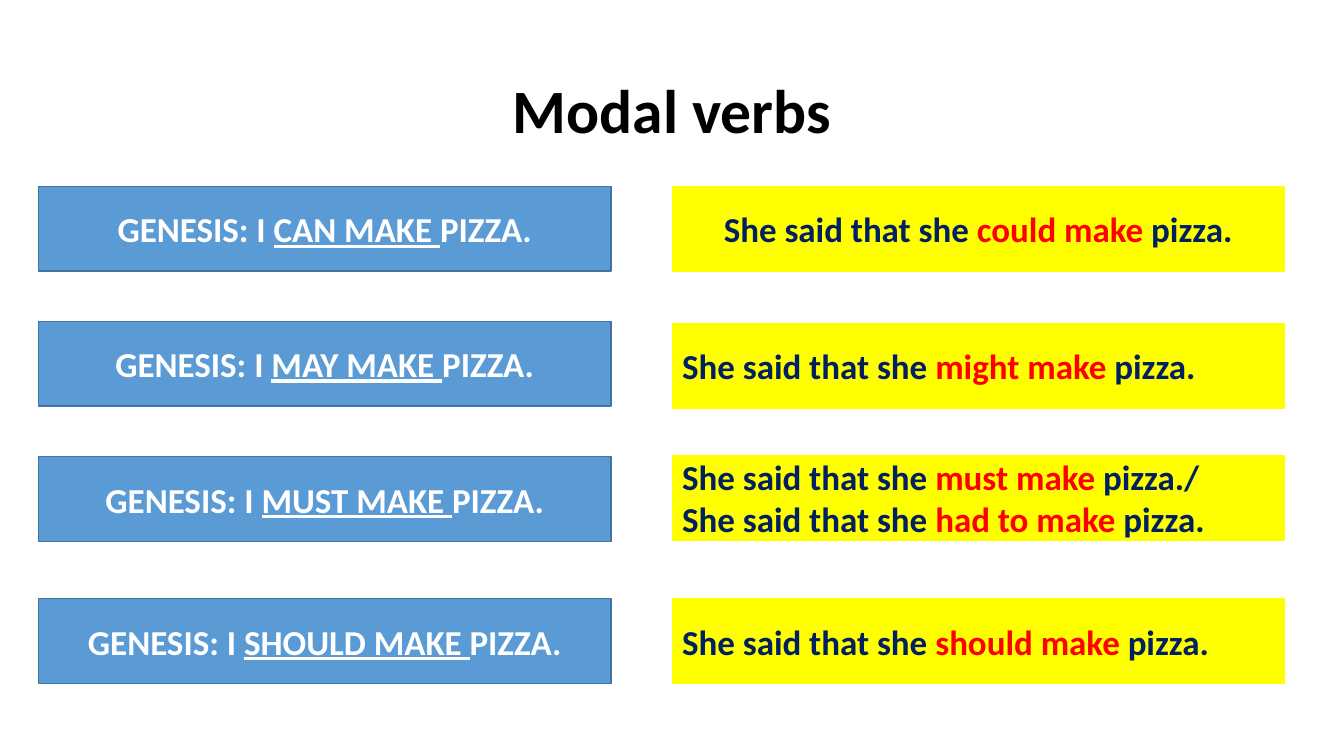
from pptx import Presentation
from pptx.dml.color import RGBColor
from pptx.enum.shapes import MSO_SHAPE
from pptx.enum.text import MSO_ANCHOR, PP_ALIGN
from pptx.util import Pt

RECT = MSO_SHAPE.RECTANGLE
MIDDLE = MSO_ANCHOR.MIDDLE
LEFT, CENTER = PP_ALIGN.LEFT, PP_ALIGN.CENTER

COLORS = {
    "title": "000000",
    "direct": "5B9BD5",
    "direct_line": "43739E",
    "direct_text": "FFFFFF",
    "reported": "FFFF00",
    "reported_text": "002060",
    "reported_verb": "FF0000",
}
BOX_HEIGHT = 60.5
DIRECT_LEFT, DIRECT_WIDTH = 27.4, 409
REPORTED_LEFT, REPORTED_WIDTH = 480.2, 437

# Direct top, direct verb, reported top, reported alignment, reported (verb, ending) lines
ROWS = [
    (133.2, "CAN MAKE ", 133.2, CENTER, [("could make ", "pizza.")]),
    (229.5, "MAY MAKE ", 231, LEFT, [("might make ", "pizza.")]),
    (326.2, "MUST MAKE ", 325.3, LEFT,
     [("must make ", "pizza./"), ("had to make ", "pizza.")]),
    (427.7, "SHOULD MAKE ", 427.7, LEFT, [("should make ", "pizza.")]),
]


def rgb(name):
    return RGBColor.from_string(COLORS[name])


def add_run(p, text, color, size=25, **extra):
    r = p.add_run()
    r.text = text
    r.font.color.rgb = rgb(color)
    formats = {"name": "Calibri", "size": Pt(size), "bold": True, **extra}
    for name, value in formats.items():
        setattr(r.font, name, value)


def place(sp, box):
    for name, value in zip(("left", "top", "width", "height"), box):
        setattr(sp, name, Pt(value))


def add_title(s, box, text):
    sp = s.shapes.title
    place(sp, box)
    tf = sp.text_frame
    tf.word_wrap = True
    tf.vertical_anchor = MIDDLE
    p = tf.paragraphs[0]
    p.alignment = CENTER
    p.line_spacing = 0.9
    add_run(p, text, "title", size=44)


def add_box(s, box, fill, line):
    """Add a filled rectangle and return its text frame."""
    sp = s.shapes.add_shape(RECT, *map(Pt, box))
    sp.shadow.inherit = False
    sp.fill.solid()
    sp.fill.fore_color.rgb = rgb(fill)
    sp.line.color.rgb = rgb(line)
    sp.line.width = Pt(1)
    tf = sp.text_frame
    tf.word_wrap = True
    tf.vertical_anchor = MIDDLE
    return tf


def add_direct_speech(s, box, verb):
    p = add_box(s, box, "direct", "direct_line").paragraphs[0]
    p.alignment = CENTER
    add_run(p, "GENESIS: I ", "direct_text")
    add_run(p, verb, "direct_text", underline=True)
    add_run(p, "PIZZA.", "direct_text")


def add_reported_speech(s, box, align, lines):
    tf = add_box(s, box, "reported", "reported")
    for i, (verb, ending) in enumerate(lines):
        p = tf.add_paragraph() if i else tf.paragraphs[0]
        p.alignment = align
        add_run(p, "She said that she ", "reported_text")
        add_run(p, verb, "reported_verb")
        add_run(p, ending, "reported_text")


def main():
    prs = Presentation()
    prs.slide_width, prs.slide_height = Pt(960), Pt(540)
    s = prs.slides.add_slide(prs.slide_layouts[5])
    add_title(s, (66, 28.8, 828, 104.4), "Modal verbs")
    for direct_top, direct_verb, reported_top, align, lines in ROWS:
        add_direct_speech(
            s, (DIRECT_LEFT, direct_top, DIRECT_WIDTH, BOX_HEIGHT), direct_verb)
        add_reported_speech(
            s, (REPORTED_LEFT, reported_top, REPORTED_WIDTH, BOX_HEIGHT), align, lines)
    prs.save("out.pptx")


if __name__ == "__main__":
    main()
